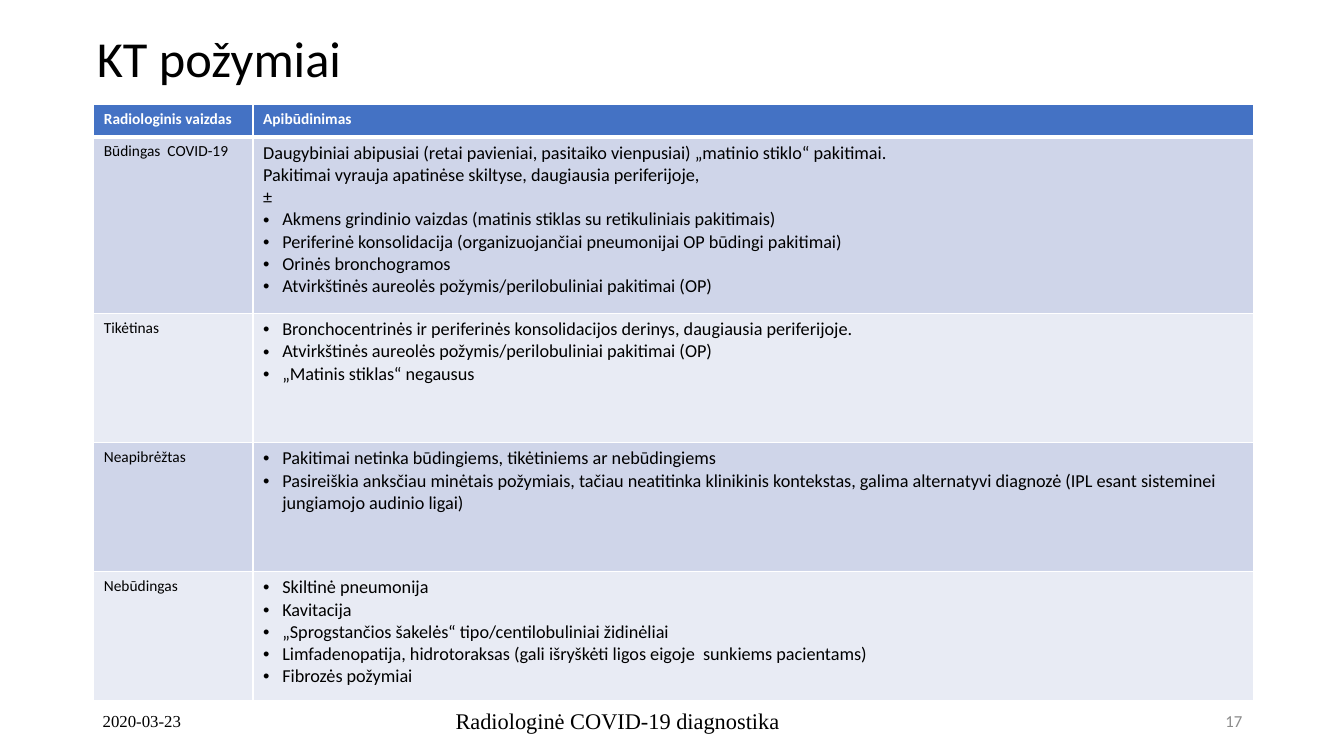
from lxml import etree
from pptx import Presentation
from pptx.dml.color import RGBColor
from pptx.enum.text import MSO_ANCHOR, MSO_AUTO_SIZE, PP_ALIGN
from pptx.oxml.ns import qn
from pptx.util import Inches, Pt

LEFT, RIGHT, MIDDLE = PP_ALIGN.LEFT, PP_ALIGN.RIGHT, MSO_ANCHOR.MIDDLE
NO_AUTOFIT = MSO_AUTO_SIZE.NONE

TITLE = "KT požymiai"
HEADER = ("Radiologinis vaizdas", "Apibūdinimas")
# Category, plain lines, bulleted lines
FINDINGS = [
    ("Būdingas  COVID-19",
     ["Daugybiniai abipusiai (retai pavieniai, pasitaiko vienpusiai) „matinio stiklo“ pakitimai.",
      "Pakitimai vyrauja apatinėse skiltyse, daugiausia periferijoje,",
      "±"],
     ["Akmens grindinio vaizdas (matinis stiklas su retikuliniais pakitimais)",
      "Periferinė konsolidacija (organizuojančiai pneumonijai OP būdingi pakitimai)",
      "Orinės bronchogramos",
      "Atvirkštinės aureolės požymis/perilobuliniai pakitimai (OP)"]),
    ("Tikėtinas", [],
     ["Bronchocentrinės ir periferinės konsolidacijos derinys, daugiausia periferijoje.",
      "Atvirkštinės aureolės požymis/perilobuliniai pakitimai (OP)",
      "„Matinis stiklas“ negausus"]),
    ("Neapibrėžtas", [],
     ["Pakitimai netinka būdingiems, tikėtiniems ar nebūdingiems",
      "Pasireiškia anksčiau minėtais požymiais, tačiau neatitinka klinikinis kontekstas, "
      "galima alternatyvi diagnozė (IPL esant sisteminei jungiamojo audinio ligai)"]),
    ("Nebūdingas", [],
     ["Skiltinė pneumonija",
      "Kavitacija",
      "„Sprogstančios šakelės“ tipo/centilobuliniai židinėliai",
      "Limfadenopatija, hidrotoraksas (gali išryškėti ligos eigoje  sunkiems pacientams)",
      "Fibrozės požymiai"]),
]
# Text, left, width, size, font, colour, alignment
FOOTERS = [
    ("2020-03-23", 0.92, 3, 12, "Times New Roman", "000000", LEFT),
    ("Radiologinė COVID-19 diagnostika", 4.42, 4.5, 16, "Times New Roman", "000000", LEFT),
    ("17", 9.42, 3, 12, "Calibri", "8B8B8B", RIGHT),
]
TABLE_LEFT, TABLE_TOP = 0.93, 1.04
COLUMNS = (1.58, 9.92)
ROWS = (0.32, 1.75, 1.28, 1.28, 1.28)
FOOTER_TOP, FOOTER_HEIGHT = 6.95, 0.4
HEADER_FILL, BAND_FILLS = "4472C4", ("CFD5E9", "E8EBF4")
INDENT = Inches(0.19)
THIN, THICK = 0.96, 3


def rgb(color):
    return RGBColor.from_string(color)


def format_text(p, size, color="000000", font="Calibri", bold=False):
    for r in p.runs:
        r.font.size, r.font.name, r.font.bold = Pt(size), font, bold
        r.font.color.rgb = rgb(color)


def add_bullet(p):
    pPr = p._p.get_or_add_pPr()
    pPr.set("marL", str(INDENT))
    pPr.set("indent", str(-INDENT))
    etree.SubElement(pPr, qn("a:buFont"), typeface="Arial")
    etree.SubElement(pPr, qn("a:buChar"), char="•")


def style_cell(cell, fill, top, bottom):
    """Give the cell white borders and a solid fill."""
    tcPr = cell._tc.get_or_add_tcPr()
    for side, width in (("L", THIN), ("R", THIN), ("T", top), ("B", bottom)):
        ln = etree.SubElement(tcPr, qn(f"a:ln{side}"), w=str(Pt(width)))
        solid = etree.SubElement(ln, qn("a:solidFill"))
        etree.SubElement(solid, qn("a:srgbClr"), val="FFFFFF")
    cell.fill.solid()
    cell.fill.fore_color.rgb = rgb(fill)


def fill_findings(cell, plain, bulleted):
    tf = cell.text_frame
    tf.text = "\n".join(plain + bulleted)
    for i, p in enumerate(tf.paragraphs):
        if i >= len(plain):
            add_bullet(p)
        format_text(p, 13)


def add_title(slide):
    title = slide.shapes.title
    title.left, title.top = Inches(0.86), Inches(-0.12)
    title.width, title.height = Inches(11.5), Inches(1.45)
    tf = title.text_frame
    tf.text = TITLE
    tf.vertical_anchor, tf.auto_size = MIDDLE, NO_AUTOFIT
    p = tf.paragraphs[0]
    p.alignment, p.line_spacing = LEFT, 0.9
    format_text(p, 36)


def add_findings_table(slide):
    table = slide.shapes.add_table(
        len(ROWS), len(COLUMNS), Inches(TABLE_LEFT), Inches(TABLE_TOP),
        Inches(sum(COLUMNS)), Inches(sum(ROWS))).table
    for column, width in zip(table.columns, COLUMNS):
        column.width = Inches(width)
    for row, height in zip(table.rows, ROWS):
        row.height = Inches(height)

    for cell, text in zip(table.rows[0].cells, HEADER):
        style_cell(cell, HEADER_FILL, THIN, THICK)
        cell.text = text
        format_text(cell.text_frame.paragraphs[0], 11, "FFFFFF", bold=True)

    for i, (category, plain, bulleted) in enumerate(FINDINGS):
        name, description = table.rows[i + 1].cells
        for cell in (name, description):
            style_cell(cell, BAND_FILLS[i % 2], THIN if i else THICK, THIN)
        name.text = category
        format_text(name.text_frame.paragraphs[0], 11)
        fill_findings(description, plain, bulleted)


def add_footers(slide):
    for text, left, width, size, font, color, align in FOOTERS:
        tf = slide.shapes.add_textbox(Inches(left), Inches(FOOTER_TOP), Inches(width),
                                      Inches(FOOTER_HEIGHT)).text_frame
        tf.word_wrap, tf.vertical_anchor = True, MIDDLE
        tf.text = text
        tf.paragraphs[0].alignment = align
        format_text(tf.paragraphs[0], size, color, font)


def main():
    prs = Presentation()
    prs.slide_width, prs.slide_height = Inches(13.33), Inches(7.5)
    slide = prs.slides.add_slide(prs.slide_layouts[5])
    add_title(slide)
    add_findings_table(slide)
    add_footers(slide)
    prs.save("out.pptx")


if __name__ == "__main__":
    main()
